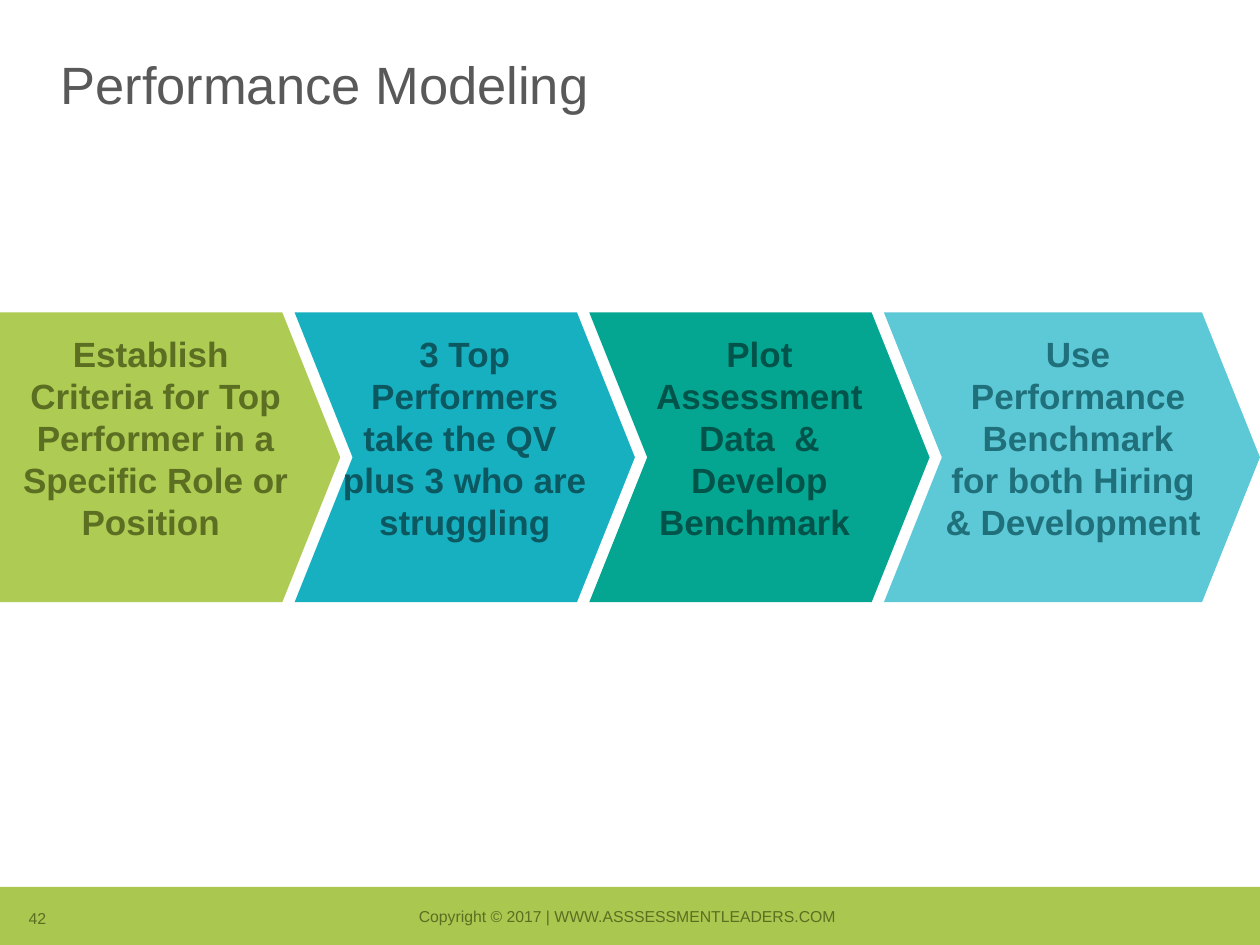
from pptx import Presentation
from pptx.dml.color import RGBColor
from pptx.enum.shapes import MSO_SHAPE
from pptx.enum.text import MSO_ANCHOR, PP_ALIGN
from pptx.util import Cm, Pt

FONT = "Arial"
COLORS = {
    "title": "595959",
    "footer": "AAC750",
    "olive": "5B6E21",
    "lime": "AECB54",
    "cyan": "17B0C1",
    "deep_cyan": "0C5860",
    "green": "04A692",
    "deep_green": "025349",
    "sky": "5DC8D6",
    "deep_sky": "1F707A",
}
STEPS = [
    ("Establish \vCriteria for Top Performer in a Specific Role or Position ", "lime", "olive", True),
    ("3 Top\vPerformers\vtake the QV \vplus 3 who are\vstruggling", "cyan", "deep_cyan", False),
    ("Plot Assessment Data  & Develop Benchmark ", "green", "deep_green", True),
    ("Use\vPerformance\vBenchmark\vfor both Hiring \v& Development ", "sky", "deep_sky", False),
]


def color(name):
    return RGBColor.from_string(COLORS[name])


def add_block(page, kind, left, top, width, height, fill):
    shape = page.shapes.add_shape(kind, Cm(left), Cm(top), Cm(width), Cm(height))
    shape.shadow.inherit = False
    shape.fill.solid()
    shape.fill.fore_color.rgb = color(fill)
    shape.line.fill.background()
    return shape


def write(box, text, size, tint, align=PP_ALIGN.LEFT, anchor=MSO_ANCHOR.TOP, bold=False, wrap=True):
    frame = box.text_frame
    frame.word_wrap = wrap
    frame.vertical_anchor = anchor
    para = frame.paragraphs[0]
    para.text = text
    para.alignment = align
    for span in para.runs:
        span.font.name = FONT
        span.font.size = Pt(size)
        span.font.bold = bold
        span.font.color.rgb = color(tint)
    return para


def add_label(page, left, top, width, height, text, size, tint, **options):
    box = page.shapes.add_textbox(Cm(left), Cm(top), Cm(width), Cm(height))
    return write(box, text, size, tint, **options)


def add_title(page, left, top, width, height):
    para = add_label(page, left, top, width, height, "Performance Modeling", 30, "title")
    para.line_spacing = 0.9


def add_process(page, left, top, width, height):
    pitch, step_width = 5.94, 6.86
    last = len(STEPS) - 1
    for index, (text, fill, tint, wrap) in enumerate(STEPS):
        kind = MSO_SHAPE.CHEVRON if index else MSO_SHAPE.PENTAGON
        start = index * pitch
        span_width = width - start if index == last else step_width
        arrow = add_block(page, kind, left + start, top, span_width, height, fill)
        arrow.adjustments[0] = 0.2
        frame = arrow.text_frame
        frame.margin_left = Cm(0.25 if index == last else 0)
        frame.margin_right = Cm(0)
        frame.margin_top = frame.margin_bottom = Cm(0.41)
        write(arrow, text, 20, tint, PP_ALIGN.CENTER, bold=True, wrap=wrap)


def add_footer(page, left, top, width, height):
    add_block(page, MSO_SHAPE.RECTANGLE, left, top, width, height, "footer")
    small = {"anchor": MSO_ANCHOR.BOTTOM, "wrap": False}
    add_label(page, left + 8.05, top + 0.26, 9.27, 0.64,
              "Copyright © 2017 | WWW.ASSSESSMENTLEADERS.COM ", 9, "olive",
              align=PP_ALIGN.CENTER, **small)
    add_label(page, left + 0.33, top + 0.31, 0.91, 0.64, "42", 9, "olive", **small)


def main():
    deck = Presentation()
    deck.slide_width, deck.slide_height = Cm(25.4), Cm(19.05)
    page = deck.slides.add_slide(deck.slide_layouts[6])
    add_footer(page, 0, 17.88, 25.4, 1.17)
    add_title(page, 0.97, 1.07, 23.5, 2.11)
    add_process(page, 0, 6.3, 25.4, 5.84)
    deck.save("out.pptx")


if __name__ == "__main__":
    main()
